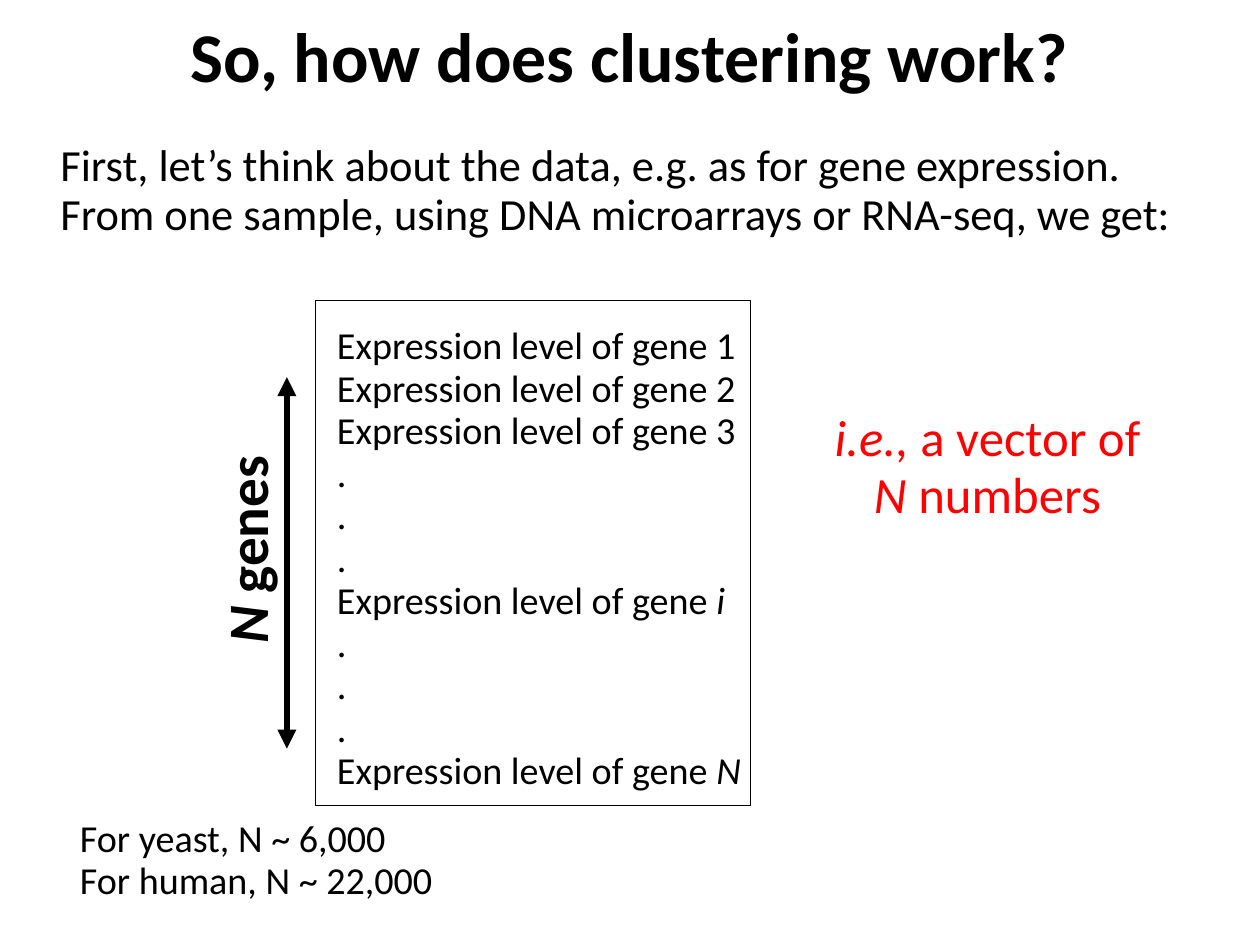
from dataclasses import dataclass
from pptx import Presentation
from pptx.dml.color import RGBColor as RGB
from pptx.enum.shapes import MSO_CONNECTOR as Link, MSO_SHAPE as Form
from pptx.enum.text import MSO_AUTO_SIZE as Fit, PP_ALIGN as Align
from pptx.oxml.ns import qn
from pptx.util import Inches, Pt
from lxml.etree import SubElement as Sub


@dataclass(frozen=True)
class Theme:
    font: str = "Calibri"
    black: RGB = RGB(0, 0, 0)
    red: RGB = RGB(255, 0, 0)
    white: RGB = RGB(255, 255, 255)
    title: int = 44
    label: int = 36
    note: int = 32
    body: int = 28
    small: int = 24
    space: float = 0.93
    thin: float = 0.75
    thick: float = 4


class Board:
    def __init__(self, slide, theme):
        self.slide = slide
        self.theme = theme
        fill = slide.background.fill
        fill.solid()
        fill.fore_color.rgb = theme.white

    def text(self, box, lines, size, color=None, bold=False,
             align=Align.LEFT, wrap=False, turn=0):
        """Add text; parts between asterisks are italic."""
        shape = self.slide.shapes.add_textbox(*map(Inches, box))
        shape.rotation = turn
        frame = shape.text_frame
        frame.word_wrap = wrap
        frame.auto_size = Fit.SHAPE_TO_FIT_TEXT
        for i, line in enumerate(lines):
            para = frame.add_paragraph() if i else frame.paragraphs[0]
            para.alignment = align
            para.line_spacing = self.theme.space
            for j, part in enumerate(line.split("*")):
                if not part:
                    continue
                run = para.add_run()
                run.text = part
                font = run.font
                font.name = self.theme.font
                font.size = Pt(size)
                font.bold = bold
                font.italic = j % 2 == 1
                font.color.rgb = color or self.theme.black

    def frame(self, box):
        shape = self.slide.shapes.add_shape(
            Form.RECTANGLE, *map(Inches, box))
        shape.shadow.inherit = False
        shape.fill.background()
        shape.line.color.rgb = self.theme.black
        shape.line.width = Pt(self.theme.thin)

    def arrow(self, start, end):
        link = self.slide.shapes.add_connector(
            Link.STRAIGHT, *map(Inches, start + end))
        link.line.color.rgb = self.theme.black
        link.line.width = Pt(self.theme.thick)
        props = link.line._get_or_add_ln()
        for tag in ("a:headEnd", "a:tailEnd"):
            Sub(props, qn(tag), type="triangle")
        Sub(link._element.spPr, qn("a:effectLst"))


def main():
    # Page of 280 by 210 millimetres
    deck = Presentation()
    deck.slide_width = Inches(280 / 25.4)
    deck.slide_height = Inches(210 / 25.4)
    theme = Theme()
    board = Board(deck.slides.add_slide(deck.slide_layouts[6]), theme)

    # Title
    board.text((0, 0.13, 11.02, 0.79), ["So, how does clustering work?"],
               theme.title, bold=True, align=Align.CENTER, wrap=True)

    # Vector of gene levels, with the lead above it
    board.frame((2.76, 2.63, 3.81, 4.42))
    board.text((0.43, 1.19, 10.02, 0.98), [
        "First, let’s think about the data, e.g. as for gene expression.",
        "From one sample, using DNA microarrays or RNA-seq, we get:",
    ], theme.body)

    # Height of the vector
    board.arrow((2.51, 3.3), (2.51, 6.55))
    board.text((1.25, 4.47, 1.86, 0.66), ["*N* genes"],
               theme.label, bold=True, turn=270)

    # Gene levels
    level = "Expression level of gene "
    dots = ["."] * 3
    first = [level + str(n) for n in range(1, 4)]
    board.text((2.85, 2.8, 3.77, 4.23),
               first + dots + [level + "*i*"] + dots + [level + "*N*"],
               theme.small)

    # Notes
    board.text((0.6, 7.11, 3.31, 0.85),
               ["For yeast, N ~ 6,000", "For human, N ~ 22,000"],
               theme.small)
    board.text((7.18, 3.55, 2.92, 1.1), ["*i.e., *a vector of *N* numbers"],
               theme.note, theme.red, align=Align.CENTER, wrap=True)

    deck.save("out.pptx")


if __name__ == "__main__":
    main()
